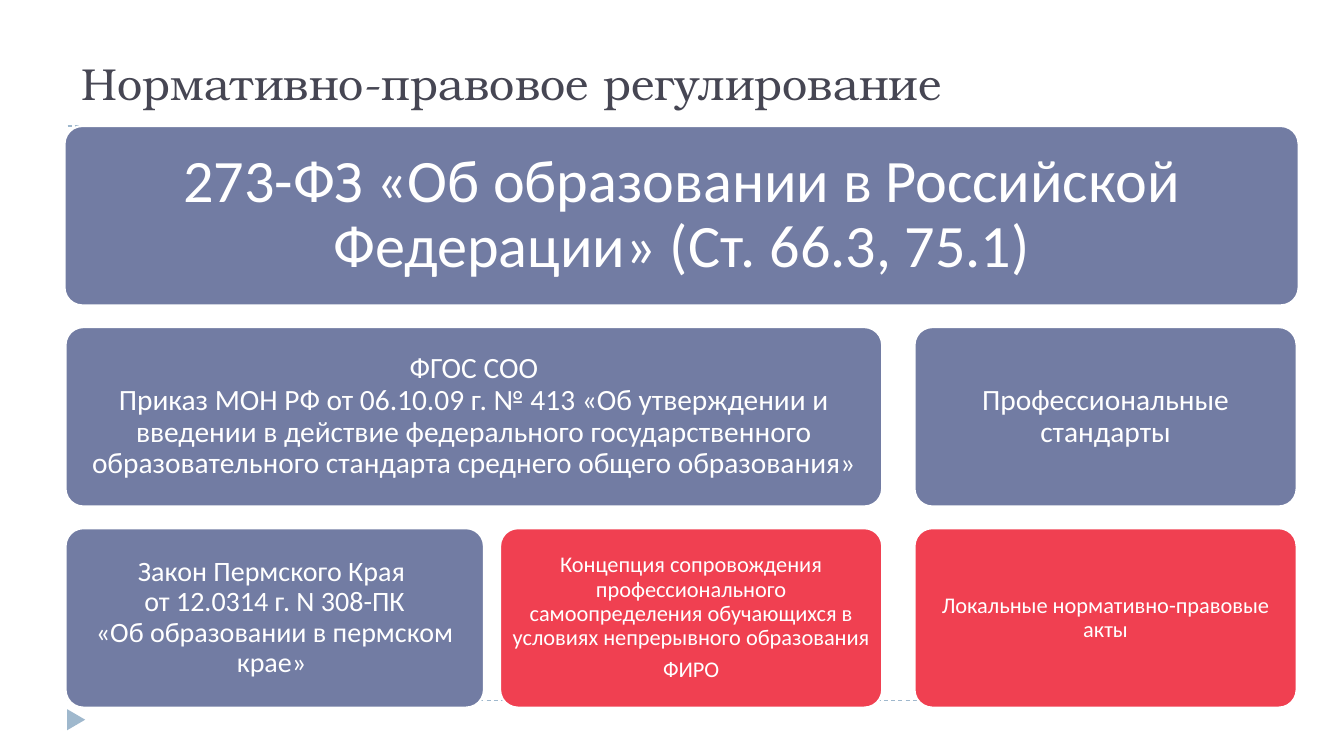
from pptx import Presentation
from pptx.dml.color import RGBColor
from pptx.enum.dml import MSO_LINE
from pptx.enum.shapes import MSO_CONNECTOR, MSO_SHAPE
from pptx.enum.text import MSO_ANCHOR, MSO_AUTO_SIZE, PP_ALIGN
from pptx.oxml.ns import qn
from pptx.util import Inches, Pt
from lxml.etree import SubElement

COLORS = {
    "title": "464653",
    "accent": "9FB8CD",
    "law": "727CA3",
    "guidance": "F04051",
    "white": "FFFFFF",
}

ROW_COUNT = 3
ROW_HEIGHT = 1.78

CARDS = [
    {"row": 0, "left": 0, "width": 12.24, "fill": "law", "size": 43, "inset": 0.18,
     "text": [["273-ФЗ «Об образовании в Российской Федерации» (Ст. 66.3, 75.1)"]]},
    {"row": 1, "left": 0.01, "width": 8.1, "fill": "law", "size": 21, "inset": 0.09,
     "text": [["ФГОС СОО",
               "Приказ МОН РФ от 06.10.09 г. № 413 «Об утверждении и введении в действие "
               "федерального государственного образовательного стандарта среднего общего "
               "образования»"]]},
    {"row": 2, "left": 0.01, "width": 4.15, "fill": "law", "size": 20, "inset": 0.08,
     "text": [["Закон Пермского Края ", "от 12.0314 г. N 308-ПК",
               "«Об образовании в пермском крае» "]]},
    {"row": 2, "left": 4.32, "width": 3.79, "fill": "guidance", "size": 16, "inset": 0.07,
     "text": [["Концепция сопровождения профессионального самоопределения обучающихся "
               "в условиях непрерывного образования"],
              ["ФИРО"]]},
    {"row": 1, "left": 8.43, "width": 3.79, "fill": "law", "size": 21, "inset": 0.09,
     "text": [["Профессиональные стандарты"]]},
    {"row": 2, "left": 8.43, "width": 3.79, "fill": "guidance", "size": 16, "inset": 0.07,
     "text": [["Локальные нормативно-правовые акты"]]},
]


def color(name):
    return RGBColor.from_string(COLORS[name])


def apply_format(target, values):
    for name, value in values.items():
        setattr(target, name, value)


def format_font(font, typeface, size, color_name):
    apply_format(font, {"name": typeface, "size": Pt(size), "bold": False})
    font.color.rgb = color(color_name)


def add_title(page, left, top, width, height):
    title = page.shapes.title
    apply_format(title, {"left": Inches(left), "top": Inches(top),
                         "width": Inches(width), "height": Inches(height)})
    apply_format(title.text_frame, {"vertical_anchor": MSO_ANCHOR.BOTTOM, "word_wrap": True,
                                    "auto_size": MSO_AUTO_SIZE.NONE})
    para = title.text_frame.paragraphs[0]
    para.alignment = PP_ALIGN.LEFT
    span = para.add_run()
    span.text = "Нормативно-правовое регулирование"
    format_font(span.font, "TeX Gyre Bonum", 32, "title")


def add_frame(page, left, top, width, height):
    for level in (top + height, top):
        rule = page.shapes.add_connector(MSO_CONNECTOR.STRAIGHT, Inches(left), Inches(level),
                                         Inches(left + width), Inches(level))
        apply_format(rule.line, {"width": Pt(0.75), "dash_style": MSO_LINE.DASH})
        rule.line.color.rgb = color("accent")
        SubElement(rule._element.spPr, qn("a:effectLst"))
    marker = page.shapes.add_shape(MSO_SHAPE.ISOSCELES_TRIANGLE, Inches(left - 0.02),
                                   Inches(top + height + 0.1), Inches(0.21), Inches(0.18))
    marker.rotation = 90
    marker.shadow.inherit = False
    marker.fill.solid()
    marker.fill.fore_color.rgb = color("accent")
    marker.line.fill.background()


def add_card(page, card, left, top, width, height):
    box = page.shapes.add_shape(MSO_SHAPE.ROUNDED_RECTANGLE, Inches(left), Inches(top),
                                Inches(width), Inches(height))
    box.adjustments[0] = 0.1
    box.shadow.inherit = False
    box.fill.solid()
    box.fill.fore_color.rgb = color(card["fill"])
    box.line.color.rgb = color("white")
    box.line.width = Pt(1.5)

    frame = box.text_frame
    inset = Inches(card["inset"])
    apply_format(frame, {"word_wrap": True, "vertical_anchor": MSO_ANCHOR.MIDDLE,
                         "margin_left": inset, "margin_right": inset,
                         "margin_top": inset, "margin_bottom": inset})
    for index, lines in enumerate(card["text"]):
        para = frame.add_paragraph() if index else frame.paragraphs[0]
        apply_format(para, {"alignment": PP_ALIGN.CENTER, "line_spacing": 0.9,
                            "space_after": Pt(card["size"] * 0.35)})
        format_font(para.font, "Calibri", card["size"], "white")
        for position, line in enumerate(lines):
            if position:
                para.add_line_break()
            span = para.add_run()
            span.text = line
            format_font(span.font, "Calibri", card["size"], "white")


def add_card_grid(page, left, top, height):
    pitch = (height - ROW_HEIGHT) / (ROW_COUNT - 1)
    for card in CARDS:
        add_card(page, card, left + card["left"], top + card["row"] * pitch,
                 card["width"], ROW_HEIGHT)


def main():
    deck = Presentation()
    apply_format(deck, {"slide_width": Inches(13.33), "slide_height": Inches(7.5)})
    page = deck.slides.add_slide(deck.slide_layouts.get_by_name("Title Only"))
    add_title(page, 0.71, 0.15, 11.5, 0.99)
    add_frame(page, 0.67, 1.25, 12, 5.7)
    add_card_grid(page, 0.64, 1.25, 5.77)
    deck.save("out.pptx")


if __name__ == "__main__":
    main()
